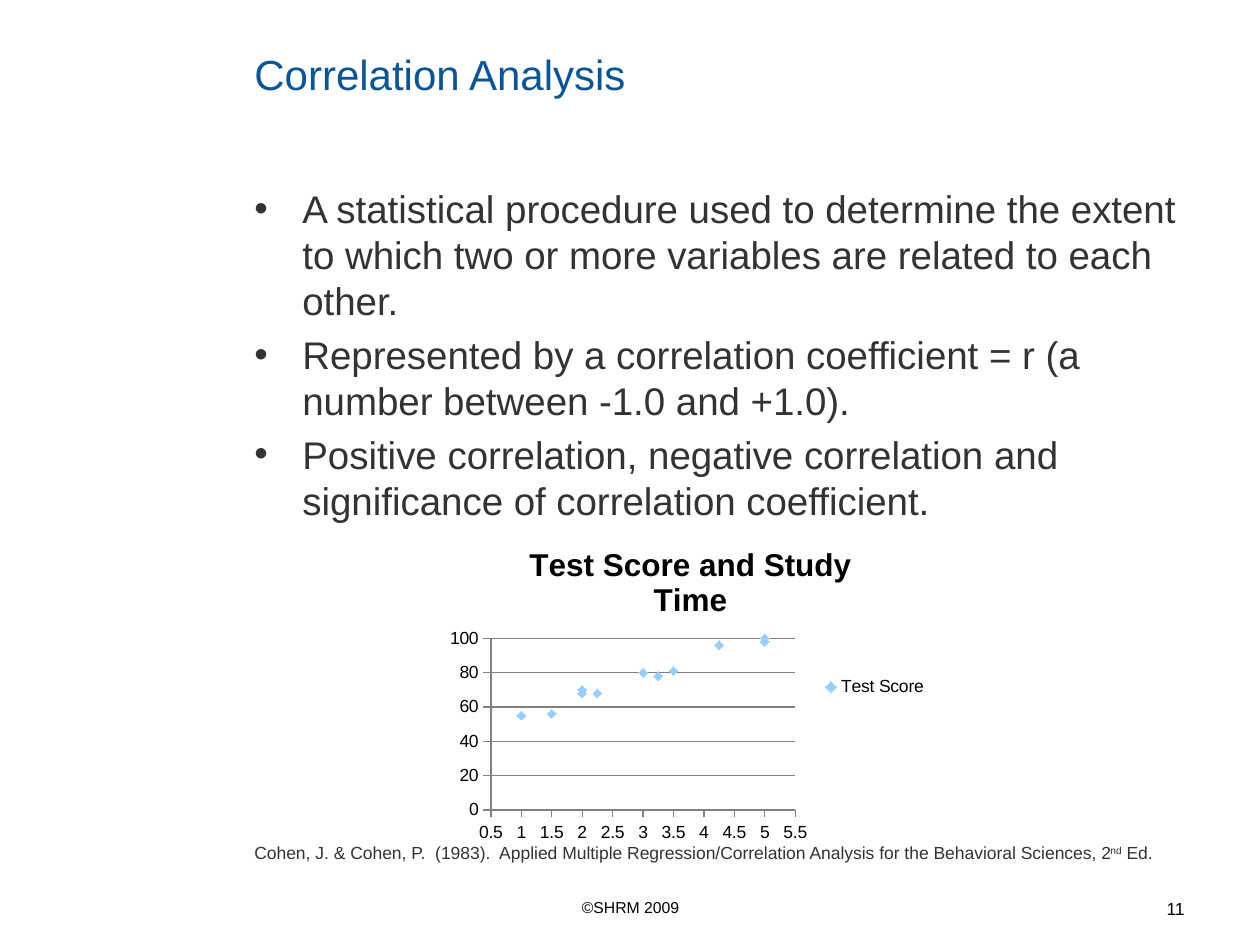
"""Build the correlation analysis slide with bullets and a scatter chart."""
from dataclasses import dataclass

from lxml import etree
from pptx import Presentation
from pptx import util as u
from pptx.chart.data import XyChartData
from pptx.dml.color import RGBColor
from pptx.enum import chart as ch
from pptx.enum import text
from pptx.oxml import parse_xml
from pptx.oxml.ns import nsdecls, qn

PX = 914400 / 126
FONT = "Arial"
BLUE = RGBColor(0x0B, 0x55, 0x94)
DARK = RGBColor(0x33, 0x33, 0x33)
BLACK = RGBColor(0, 0, 0)
GREY = RGBColor(0x80, 0x80, 0x80)
SKY = RGBColor(0x99, 0xCC, 0xFF)
INDENT = 48

BULLETS = (
    "A statistical procedure used to determine the extent to which two or more "
    "variables are related to each other.",
    "Represented by a correlation coefficient = r (a number between -1.0 and +1.0).",
    "Positive correlation, negative correlation and significance of correlation "
    "coefficient.",
)
CITATION = (
    "Cohen, J. & Cohen, P.  (1983).  Applied Multiple Regression/Correlation "
    "Analysis for the Behavioral Sciences, 2"
)
SCORES = (
    (5, 100), (4.25, 96), (1, 55), (2, 70), (5, 98), (3, 80),
    (3.5, 81), (1.5, 56), (2, 68), (2.25, 68), (3.25, 78),
)
PLOT_AREA = {"x": 0.1, "y": 0.35, "w": 0.61, "h": 0.53}


@dataclass(frozen=True)
class Block:
    left: int
    top: int
    width: int
    height: int
    lines: tuple[str, ...]
    size: int
    color: RGBColor
    align: text.PP_ALIGN = text.PP_ALIGN.LEFT
    anchor: text.MSO_ANCHOR = text.MSO_ANCHOR.TOP
    bulleted: bool = False


TITLE = Block(242, 42, 955, 63, ("Correlation Analysis",), 24, BLUE,
              anchor=text.MSO_ANCHOR.MIDDLE)
BODY = Block(242, 179, 955, 350, BULLETS, 22, DARK, bulleted=True)
SOURCE = Block(242, 836, 955, 34, (CITATION,), 10, DARK)
FOOTER = Block(431, 892, 399, 34, ("©SHRM 2009",), 9, BLACK, text.PP_ALIGN.CENTER)
NUMBER = Block(903, 892, 294, 34, ("11",), 10, BLACK, text.PP_ALIGN.RIGHT)


def px(length: int) -> u.Emu:
    return u.Emu(round(length * PX))


def add_bullet(paragraph) -> None:
    properties = paragraph._p.get_or_add_pPr()
    properties.set("marL", str(px(INDENT)))
    properties.set("indent", str(-px(INDENT)))
    etree.SubElement(properties, qn("a:buFont")).set("typeface", FONT)
    etree.SubElement(properties, qn("a:buChar")).set("char", "•")


def add_block(slide, block: Block):
    box = slide.shapes.add_textbox(
        px(block.left), px(block.top), px(block.width), px(block.height))
    frame = box.text_frame
    frame.word_wrap = True
    frame.vertical_anchor = block.anchor
    for index, line in enumerate(block.lines):
        paragraph = frame.add_paragraph() if index else frame.paragraphs[0]
        paragraph.text = line
        paragraph.alignment = block.align
        if block.bulleted:
            add_bullet(paragraph)
            paragraph.line_spacing = u.Pt(26.3)
            if index:
                paragraph.space_before = u.Pt(4.4)
        paragraph.font.name = FONT
        paragraph.font.size = u.Pt(block.size)
        paragraph.font.color.rgb = block.color
    return frame


def style_axis(axis, low: float, high: float, step: float) -> None:
    axis.minimum_scale, axis.maximum_scale, axis.major_unit = low, high, step
    axis.major_tick_mark = ch.XL_TICK_MARK.OUTSIDE
    axis.minor_tick_mark = ch.XL_TICK_MARK.NONE
    axis.tick_labels.number_format = "General"
    axis.tick_labels.number_format_is_linked = False
    axis.format.line.color.rgb = GREY


def place_plot(chart) -> None:
    plot = chart._chartSpace.chart.plotArea
    for old in plot.findall(qn("c:layout")):
        plot.remove(old)
    modes = '<c:layoutTarget val="inner"/><c:xMode val="edge"/><c:yMode val="edge"/>'
    sizes = "".join(f'<c:{key} val="{part}"/>' for key, part in PLOT_AREA.items())
    plot.insert(0, parse_xml(
        f'<c:layout {nsdecls("c")}><c:manualLayout>{modes}{sizes}'
        "</c:manualLayout></c:layout>"))


def add_scores_chart(slide) -> None:
    scores = XyChartData()
    test_score = scores.add_series("Test Score")
    for hours, score in SCORES:
        test_score.add_data_point(hours, score)
    chart = slide.shapes.add_chart(
        ch.XL_CHART_TYPE.XY_SCATTER, px(441), px(525), px(499), px(324), scores).chart
    chart.font.name = FONT
    chart.font.size = u.Pt(10)
    chart.font.color.rgb = BLACK

    chart.has_title = True
    heading = chart.chart_title.text_frame.paragraphs[0]
    heading.text = "Test Score and Study Time"
    heading.font.name = FONT
    heading.font.size = u.Pt(18)
    heading.font.bold = True
    heading.font.color.rgb = BLACK

    chart.has_legend = True
    chart.legend.position = ch.XL_LEGEND_POSITION.RIGHT
    chart.legend.include_in_layout = False

    style_axis(chart.category_axis, 0.5, 5.5, 0.5)
    style_axis(chart.value_axis, 0, 100, 20)
    chart.category_axis.has_major_gridlines = False
    chart.value_axis.has_major_gridlines = True
    chart.value_axis.major_gridlines.format.line.color.rgb = GREY

    chart.plots[0].vary_by_categories = False
    series = chart.plots[0].series[0]
    series.smooth = False
    series.format.line.fill.background()
    series.marker.style = ch.XL_MARKER_STYLE.DIAMOND
    series.marker.size = 5
    series.marker.format.fill.solid()
    series.marker.format.fill.fore_color.rgb = SKY
    series.marker.format.line.color.rgb = SKY
    place_plot(chart)


def main() -> None:
    deck = Presentation()
    deck.slide_width, deck.slide_height = px(1260), px(945)
    slide = deck.slides.add_slide(deck.slide_layouts[6])
    for block in (TITLE, BODY, FOOTER, NUMBER):
        add_block(slide, block)
    citation = add_block(slide, SOURCE).paragraphs[0]
    ordinal = citation.add_run()
    ordinal.text = "nd"
    ordinal.font._element.set("baseline", "30000")
    citation.add_run().text = " Ed."
    add_scores_chart(slide)
    deck.save("out.pptx")


if __name__ == "__main__":
    main()
